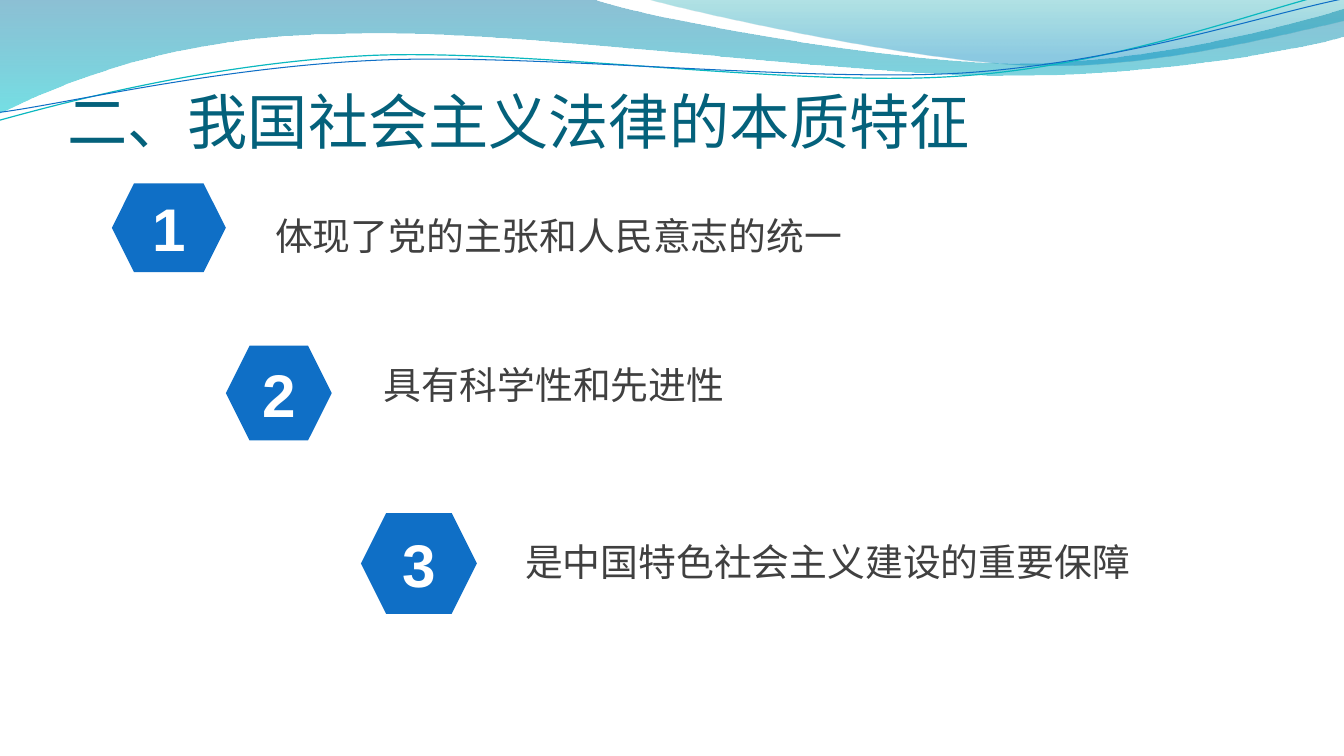
"""Build the slide on the essential features of the law: a wave header and three numbered points."""
import dataclasses
import typing

import pptx
import pptx.dml.color
import pptx.enum.lang
import pptx.enum.shapes
import pptx.enum.text
import pptx.util
from lxml import etree

EMU_PER_PX = 9144
DRAWING = "http://schemas.openxmlformats.org/drawingml/2006/main"
BLUE, WHITE, TEAL, GREY = "0F6FC6", "FFFFFF", "04617B", "404040"

Point = tuple[int, int]
Box = tuple[int, int, int, int]


@dataclasses.dataclass(frozen=True)
class Stop:
    """A gradient stop; position and opacity are percentages."""
    position: int
    color: str
    opacity: int


@dataclasses.dataclass(frozen=True)
class Wave:
    """An outline whose segments hold one point (line) or three (Bezier curve)."""
    start: Point
    segments: tuple[tuple[Point, ...], ...]
    stops: tuple[Stop, ...] = ()
    line: str = ""
    weight: float = 0
    rotation: float = 0


@dataclasses.dataclass(frozen=True)
class Item:
    """A numbered badge with its statement."""
    badge: Box
    label: Box
    text: str


FILLED_WAVES = (
    Wave((0, -1), (
        ((587, -1),),
        ((634, 17), (885, 63), (1011, 63)),
        ((1138, 63), (1278, 26), (1333, 9)),
        ((1335, 36),),
        ((1311, 44), (1160, 76), (994, 75)),
        ((829, 75), (509, 28), (343, 34)),
        ((172, 35), (61, 83), (-1, 113)),
        ((0, -1),),
    ), stops=(Stop(0, "0074A1", 45), Stop(100, "00C6CF", 55))),
    Wave((639, -1), (
        ((679, 11), (909, 62), (1025, 65)),
        ((1141, 69), (1282, 32), (1333, 21)),
        ((1333, 0),),
        ((639, -1),),
    ), stops=(Stop(0, "00A1A9", 30), Stop(80, "008BBF", 45))),
)

WAVY_LINES = (
    Wave((-3, 88), (
        ((63, 73), (211, 41), (369, 41)),
        ((528, 42), (788, 93), (949, 89)),
        ((1109, 86), (1254, 36), (1333, 22)),
    ), line="0AB8BF", weight=0.85, rotation=357.3),
    Wave((-2, 80), (
        ((62, 75), (218, 45), (378, 46)),
        ((537, 47), (795, 88), (954, 86)),
        ((1114, 83), (1256, 42), (1336, 30)),
    ), line=BLUE, weight=0.75, rotation=357.3),
)

ITEMS = (
    Item((111, 182, 113, 88), (263, 206, 588, 56), "体现了党的主张和人民意志的统一"),
    Item((224, 343, 105, 94), (371, 354, 361, 56), "具有科学性和先进性"),
    Item((358, 509, 115, 100), (511, 530, 626, 56), "是中国特色社会主义建设的重要保障"),
)


def px(length: int) -> int:
    """Convert px to EMU."""
    return length * EMU_PER_PX


def rgb(color: str) -> pptx.dml.color.RGBColor:
    """Turn a hex string into a colour."""
    return pptx.dml.color.RGBColor.from_string(color)


def fill_gradient(shape: typing.Any, stops: tuple[Stop, ...]) -> None:
    """Fill a shape from top to bottom with translucent stops."""
    shape.fill.gradient()
    shape.fill.gradient_angle = 270
    for target, stop in zip(shape.fill.gradient_stops, stops):
        target.position = stop.position / 100
        target.color.rgb = rgb(stop.color)
    colors = shape.element.spPr.iter(f"{{{DRAWING}}}srgbClr")
    for color, stop in zip(colors, stops):
        etree.SubElement(color, f"{{{DRAWING}}}alpha", val=str(stop.opacity * 1000))


def bend(shape: typing.Any, segments: tuple[tuple[Point, ...], ...]) -> None:
    """Merge each run of three straight steps into one Bezier curve."""
    steps = iter(list(shape.element.spPr.iter(f"{{{DRAWING}}}lnTo")))
    for segment in segments:
        first, *others = [next(steps) for _ in segment]
        if others:
            curve = etree.Element(f"{{{DRAWING}}}cubicBezTo")
            first.addprevious(curve)
            for step in (first, *others):
                curve.append(step[0])
                step.getparent().remove(step)


def draw_wave(shapes: typing.Any, wave: Wave) -> None:
    """Draw a filled wave or an open wavy line."""
    points = [(px(x), px(y)) for segment in wave.segments for x, y in segment]
    builder = shapes.build_freeform(px(wave.start[0]), px(wave.start[1]))
    builder.add_line_segments(points, close=bool(wave.stops))
    shape = builder.convert_to_shape()
    bend(shape, wave.segments)
    shape.rotation = wave.rotation
    shape.shadow.inherit = False
    if wave.stops:
        fill_gradient(shape, wave.stops)
        shape.line.fill.background()
    else:
        shape.fill.background()
        shape.line.color.rgb = rgb(wave.line)
        shape.line.width = pptx.util.Pt(wave.weight)


def write(shape: typing.Any, text: str, *, size: int, color: str, font: str = "Arial",
          bold: bool = False, wrap: bool = True, align: str = "LEFT", anchor: str = "TOP") -> None:
    """Put one formatted paragraph into a shape."""
    frame = shape.text_frame
    frame.word_wrap = wrap
    frame.vertical_anchor = pptx.enum.text.MSO_ANCHOR[anchor]
    para = frame.paragraphs[0]
    para.alignment = pptx.enum.text.PP_ALIGN[align]
    span = para.add_run()
    span.text = text
    span.font.name = font
    span.font.size = pptx.util.Pt(size)
    span.font.bold = bold
    span.font.color.rgb = rgb(color)
    span.font.language_id = pptx.enum.lang.MSO_LANGUAGE_ID.SIMPLIFIED_CHINESE


def draw_title(page: typing.Any) -> None:
    """Draw the slide title."""
    box = page.shapes.add_textbox(*map(px, (67, 30, 1200, 125)))
    frame = box.text_frame
    frame.margin_left = frame.margin_right = frame.margin_bottom = 0
    write(box, "二、我国社会主义法律的本质特征", size=43, color=TEAL, font="Calibri", anchor="BOTTOM")


def draw_item(page: typing.Any, number: int, item: Item) -> None:
    """Draw a numbered hexagon grouped with its statement."""
    group = page.shapes.add_group_shape()
    badge = group.shapes.add_shape(pptx.enum.shapes.MSO_SHAPE.HEXAGON, *map(px, item.badge))
    badge.shadow.inherit = False
    badge.fill.solid()
    badge.fill.fore_color.rgb = rgb(BLUE)
    badge.line.fill.background()
    write(badge, str(number), size=43, color=WHITE, bold=True, align="CENTER", anchor="MIDDLE")
    label = group.shapes.add_textbox(*map(px, item.label))
    write(label, item.text, size=27, color=GREY, wrap=False)
    label.text_frame.auto_size = pptx.enum.text.MSO_AUTO_SIZE.SHAPE_TO_FIT_TEXT


def main() -> None:
    """Build and save the deck."""
    deck = pptx.Presentation()
    deck.slide_width, deck.slide_height = px(1333), px(750)
    page = deck.slides.add_slide(deck.slide_layouts[6])
    for wave in FILLED_WAVES:
        draw_wave(page.shapes, wave)
    lines = page.shapes.add_group_shape()
    for wave in WAVY_LINES:
        draw_wave(lines.shapes, wave)
    draw_title(page)
    for number, item in enumerate(ITEMS, start=1):
        draw_item(page, number, item)
    deck.save("out.pptx")


if __name__ == "__main__":
    main()
